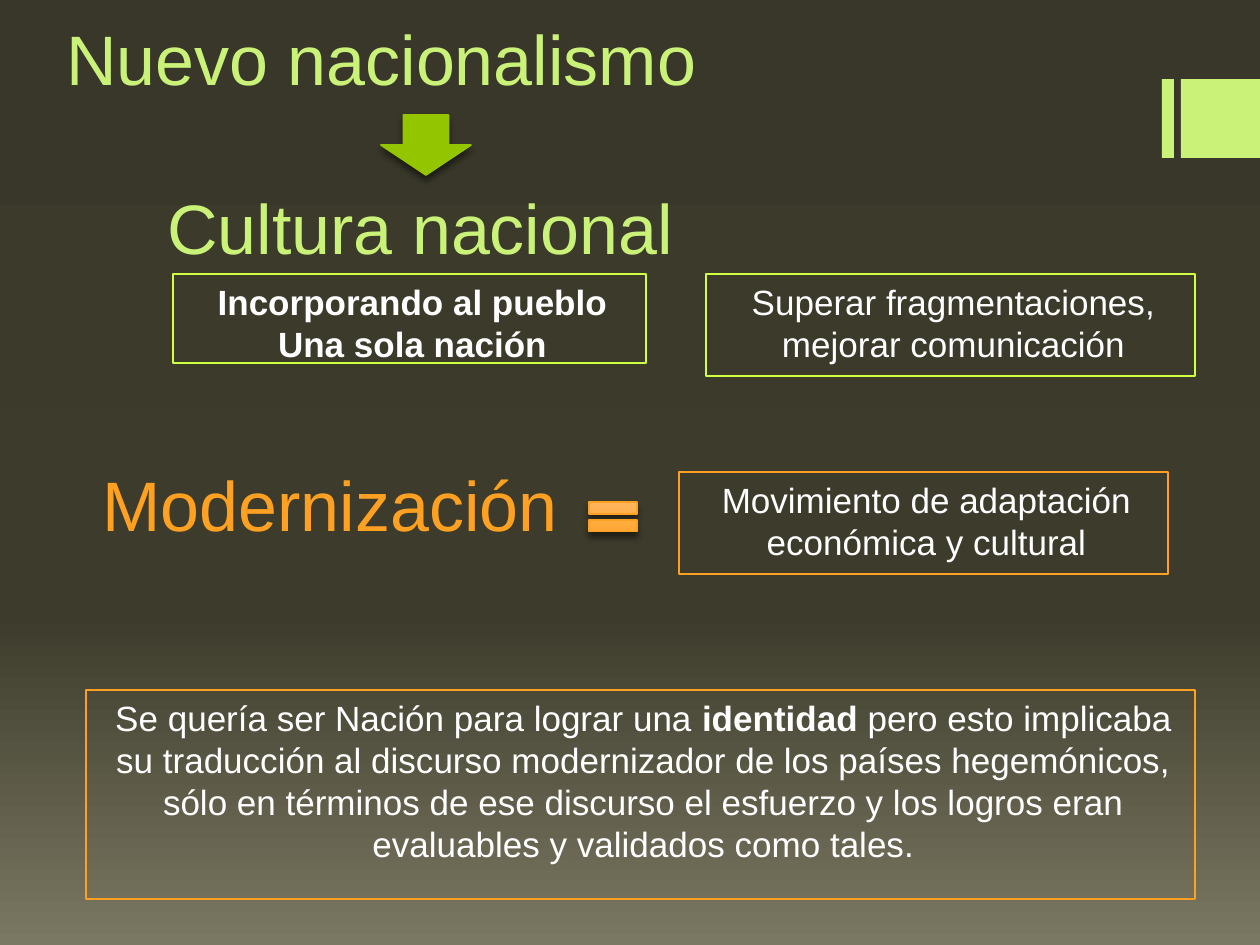
from copy import deepcopy

from lxml.etree import SubElement
from pptx import Presentation
from pptx.dml.color import RGBColor
from pptx.enum.shapes import MSO_SHAPE as Shape
from pptx.enum.text import MSO_ANCHOR as Anchor, PP_ALIGN as Align
from pptx.oxml.ns import qn
from pptx.util import Emu, Pt

COLORS = {
    "lime": "CAF278", "bright": "D0FF44", "green": "94C600",
    "orange": "FEA022", "white": "FFFFFF", "black": "000000",
}
BACKDROP = [(0, "383729"), (0.65, "3D3C2C"), (1, "7A7862")]
GLOW = [(0, "FFBB71"), (0.6, "FFAC3E"), (1, "FEA022")]


def px(n):
    return Emu(round(n * 914400 / 126))


def rgb(name):
    return RGBColor.from_string(COLORS[name])


class Deck:
    font = "Arial"
    heading_size = Pt(40)
    body_size = Pt(20)

    def __init__(self):
        self.prs = Presentation()
        self.prs.slide_width, self.prs.slide_height = px(1260), px(945)

    def slide(self):
        self.s = self.prs.slides.add_slide(self.prs.slide_layouts[5])
        self.gradient(self.s.background.fill, self.s._element, BACKDROP)

    def gradient(self, fill, element, stops):
        fill.gradient()
        fill.gradient_angle = 270
        gs_list = element.find(".//" + qn("a:gsLst"))
        gs_list.append(deepcopy(gs_list[-1]))
        for stop, (position, color) in zip(fill.gradient_stops, stops):
            stop.position = position
            stop.color.rgb = RGBColor.from_string(color)

    def style(self, p, size, color):
        p.alignment = Align.CENTER
        p.font.name, p.font.size = self.font, size
        p.font.color.rgb = rgb(color)

    def heading(self, x, y, text, color, title=False):
        box = 1008, 159
        if title:
            sp = self.s.shapes.title
            sp.left, sp.top, sp.width, sp.height = map(px, (x, y, *box))
        else:
            sp = self.s.shapes.add_textbox(*map(px, (x, y, *box)))
        tf = sp.text_frame
        tf.word_wrap = True
        tf.vertical_anchor = Anchor.BOTTOM
        p = tf.paragraphs[0]
        p.text = text
        self.style(p, self.heading_size, color)

    def shape(self, kind, x, y, w, h, fill=None, line=None, weight=1):
        sp = self.s.shapes.add_shape(kind, *map(px, (x, y, w, h)))
        sp.shadow.inherit = False
        if isinstance(fill, list):
            self.gradient(sp.fill, sp._element, fill)
        elif fill:
            sp.fill.solid()
            sp.fill.fore_color.rgb = rgb(fill)
        else:
            sp.fill.background()
        if line:
            sp.line.color.rgb = rgb(line)
            sp.line.width = Pt(weight)
        else:
            sp.line.fill.background()
        return sp

    def symbol(self, kind, x, y, w, h, fill, line):
        sp = self.shape(kind, x, y, w, h, fill, line)
        effects = sp._element.spPr.find(qn("a:effectLst"))
        shadow = SubElement(effects, qn("a:outerShdw"), blurRad=str(Pt(3.8)),
                            dist=str(Pt(3)), dir="5400000", rotWithShape="0")
        color = SubElement(shadow, qn("a:srgbClr"), val=COLORS["black"])
        SubElement(color, qn("a:alpha"), val="48000")

    def box(self, x, y, w, h, line, runs):
        tf = self.shape(Shape.RECTANGLE, x, y, w, h, line=line, weight=0.75).text_frame
        tf.word_wrap = True
        tf.vertical_anchor = Anchor.TOP
        p = tf.paragraphs[0]
        p.space_before = Pt(4)
        p._p.get_or_add_pPr().set("marL", str(px(6)))
        self.style(p, self.body_size, "white")
        for text, bold in runs:
            for i, part in enumerate(text.split("\n")):
                if i:
                    p.add_line_break()
                r = p.add_run()
                r.text = part
                if bold:
                    r.font.bold = True


def main():
    deck = Deck()
    deck.slide()
    for x, w in ((1162, 12), (1181, 79)):
        deck.shape(Shape.RECTANGLE, x, 79, w, 79, fill="lime")

    deck.heading(-123, -53, "Nuevo nacionalismo", "lime", title=True)
    deck.heading(-84, 116, "Cultura nacional", "lime")
    deck.box(173, 274, 473, 89, "bright",
             [("Incorporando al pueblo\nUna sola nación", True)])
    deck.symbol(Shape.DOWN_ARROW, 381, 115, 90, 60, "green", "green")
    deck.box(706, 274, 489, 102, "bright",
             [("Superar fragmentaciones, mejorar comunicación", False)])

    deck.heading(-174, 393, "Modernización", "orange")
    deck.box(679, 472, 489, 102, "orange",
             [("Movimiento de adaptación económica y cultural", False)])
    deck.symbol(Shape.MATH_EQUAL, 580, 492, 66, 50, GLOW, "orange")
    deck.box(86, 690, 1109, 209, "orange", [
        ("Se quería ser Nación para lograr una ", False),
        ("identidad", True),
        (" pero esto implicaba su traducción al discurso modernizador de los "
         "países hegemónicos, sólo en términos de ese discurso el esfuerzo y "
         "los logros eran evaluables y validados como tales.", False),
    ])
    deck.prs.save("out.pptx")


if __name__ == "__main__":
    main()
